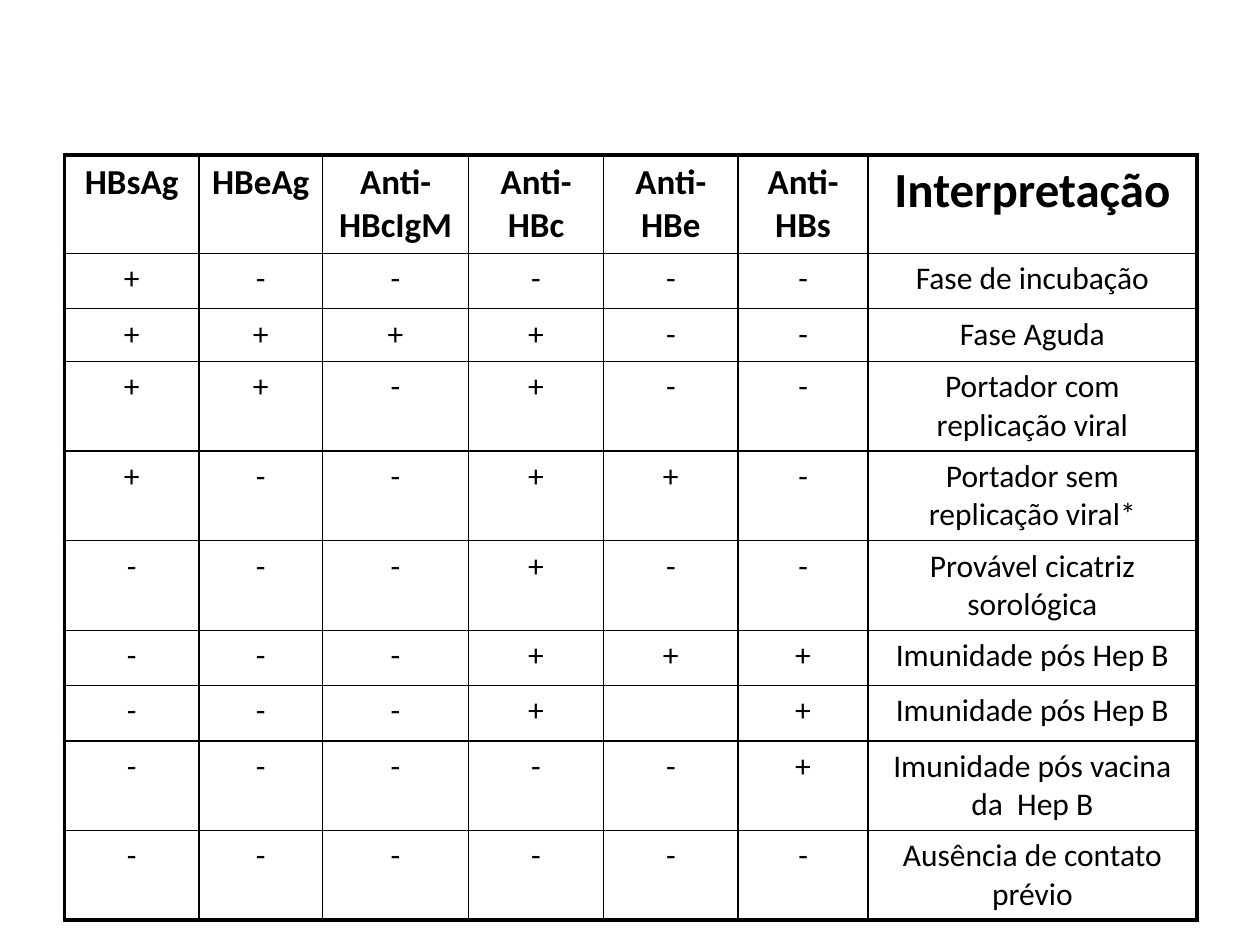
from lxml import etree
from pptx import Presentation
from pptx import util as u
from pptx.dml.color import RGBColor
from pptx.enum import text
from pptx.oxml.ns import qn

FONT, INK = "Calibri", "000000"
INNER_LINE, OUTER_LINE = 1, 2.25
BODY_SIZE, MARKER_SIZE, HEADING_SIZE = 18, 20, 28

MARKERS = ["HBsAg", "HBeAg", "Anti-HBcIgM", "Anti-HBc", "Anti-HBe", "Anti-HBs"]
HEADING = "Interpretação"
# One sign per marker (a space is an untested marker), interpretation, row height
PROFILES = [
    ("+-----", "Fase de incubação", 0.44),
    ("++++--", "Fase Aguda", 0.42),
    ("++-+--", "Portador com replicação viral", 0.7),
    ("+--++-", "Portador sem replicação viral*", 0.7),
    ("---+--", "Provável cicatriz sorológica", 0.7),
    ("---+++", "Imunidade pós Hep B", 0.44),
    ("---+ +", "Imunidade pós Hep B", 0.44),
    ("-----+", "Imunidade pós vacina da  Hep B", 0.7),
    ("------", "Ausência de contato prévio", 0.7),
]
LEFT, TOP = 0.51, 1.23
COLUMN_WIDTHS = [1.07, 0.98, 1.16, 1.07, 1.07, 1.03, 2.61]
ROW_HEIGHTS = [0.77] + [height for _, _, height in PROFILES]


def color(hex_value):
    return RGBColor.from_string(hex_value)


def add_border(cell, side, points):
    """Draw one side (L, R, T or B) of a cell."""
    line = etree.SubElement(cell._tc.get_or_add_tcPr(), qn(f"a:ln{side}"),
                            w=str(u.Pt(points)))
    fill = etree.SubElement(line, qn("a:solidFill"))
    etree.SubElement(fill, qn("a:srgbClr"), val=INK)


def write_cell(cell, wording, size, bold):
    cell.text = wording.strip()
    paragraph = cell.text_frame.paragraphs[0]
    paragraph.alignment = text.PP_ALIGN.CENTER
    font = paragraph.font
    font.name, font.size, font.bold = FONT, u.Pt(size), bold
    font.color.rgb = color(INK)


def main():
    deck = Presentation()
    deck.slide_width, deck.slide_height = u.Inches(10), u.Inches(7.5)
    slide = deck.slides.add_slide(deck.slide_layouts[6])

    rows = [MARKERS + [HEADING]]
    rows += [list(signs) + [meaning] for signs, meaning, _ in PROFILES]
    last_row, last_column = len(rows) - 1, len(MARKERS)

    table = slide.shapes.add_table(
        len(rows), len(COLUMN_WIDTHS), u.Inches(LEFT), u.Inches(TOP),
        u.Inches(sum(COLUMN_WIDTHS)), u.Inches(sum(ROW_HEIGHTS))).table
    table.first_row = table.horz_banding = False
    for column, width in zip(table.columns, COLUMN_WIDTHS):
        column.width = u.Inches(width)
    for row, height in zip(table.rows, ROW_HEIGHTS):
        row.height = u.Inches(height)

    for r, entries in enumerate(rows):
        for c, wording in enumerate(entries):
            cell = table.cell(r, c)
            header_size = HEADING_SIZE if c == last_column else MARKER_SIZE
            write_cell(cell, wording, BODY_SIZE if r else header_size, r == 0)
            on_edge = {"L": c == 0, "R": c == last_column,
                       "T": r == 0, "B": r == last_row}
            for side, outer in on_edge.items():
                add_border(cell, side, OUTER_LINE if outer else INNER_LINE)
            cell.fill.background()

    deck.save("out.pptx")


if __name__ == "__main__":
    main()
